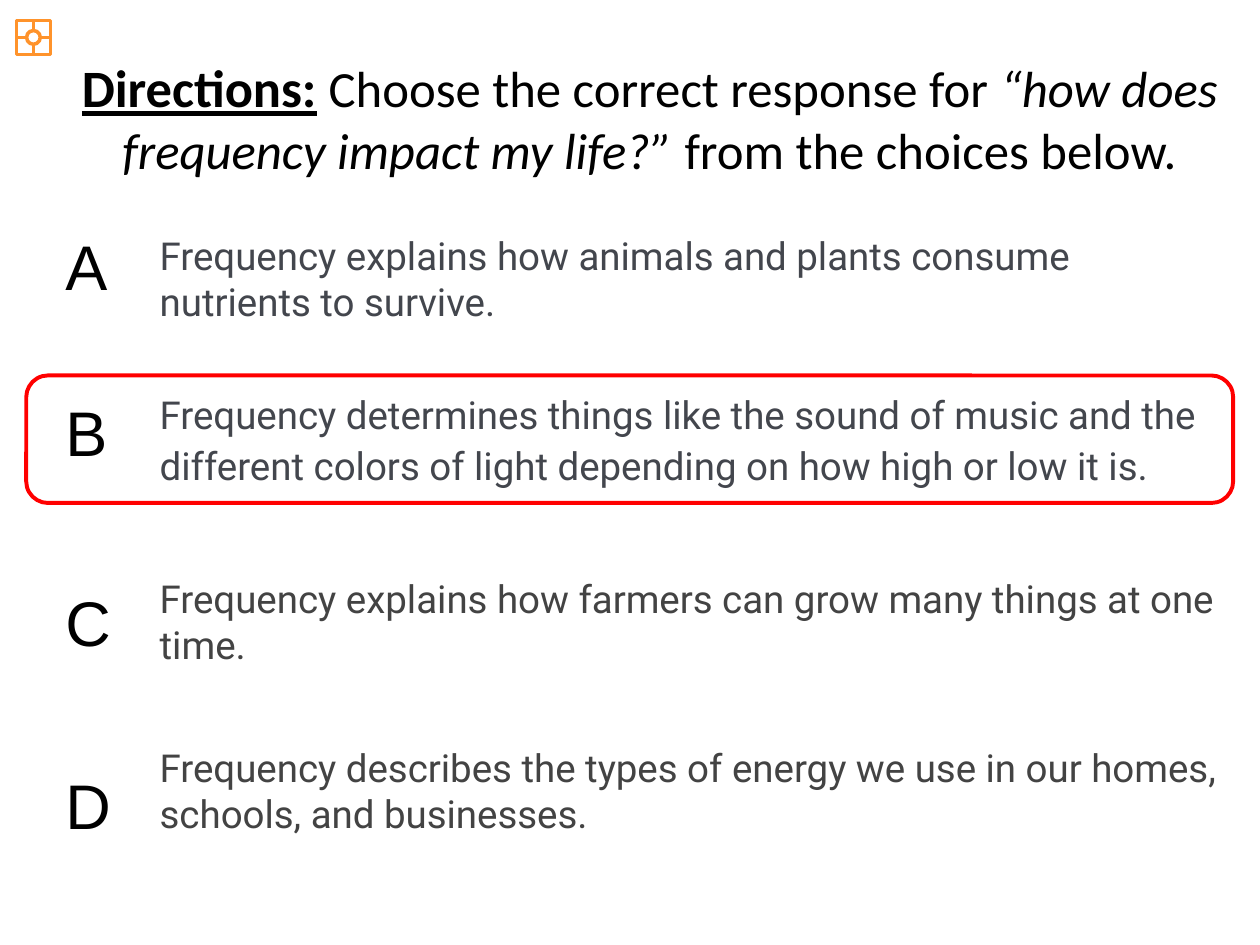
from lxml import etree
from pptx import Presentation
from pptx.dml.color import RGBColor
from pptx.enum.shapes import MSO_CONNECTOR, MSO_SHAPE
from pptx.enum.text import MSO_ANCHOR, MSO_AUTO_SIZE, PP_ALIGN
from pptx.oxml.ns import qn
from pptx.util import Cm, Pt

STRAIGHT = MSO_CONNECTOR.STRAIGHT
RECTANGLE, OVAL, ROUNDED = MSO_SHAPE.RECTANGLE, MSO_SHAPE.OVAL, MSO_SHAPE.ROUNDED_RECTANGLE
TOP, CENTER, NO_AUTOFIT = MSO_ANCHOR.TOP, PP_ALIGN.CENTER, MSO_AUTO_SIZE.NONE
ORANGE, RED, WHITE, BLACK = "FF932B", "FF0000", "FFFFFF", "000000"
SLATE, GREY = "43464D", "434343"

DIRECTIONS = [
    ("Directions:", 30, True, False, True),
    (" ", 30, True, False, False),
    ("Choose the correct response for ", 29, False, False, False),
    ("“how does frequency impact my life?” ", 29, False, True, False),
    ("from the choices below.", 29, False, False, False),
]
CHOICES = [
    ("A", "Frequency explains how animals and plants consume nutrients to survive.",
     SLATE, 4.55, -0.08, 1.0),
    ("B", "Frequency determines things like the sound of music and the different colors "
     "of light depending on how high or low it is.", SLATE, 7.67, 0.13, 1.1),
    ("C", "Frequency explains how farmers can grow many things at one time.",
     GREY, 11.46, 0.17, 1.0),
    ("D", "Frequency describes the types of energy we use in our homes, schools, "
     "and businesses.", GREY, 14.88, 0.44, 1.0),
]


def color(hex_string):
    """Return the colour for a hex string."""
    return RGBColor.from_string(hex_string)


def format_run(run, font_name, size, hex_string):
    """Set the font, size and colour of a run."""
    run.font.name = font_name
    run.font.size = Pt(size)
    run.font.color.rgb = color(hex_string)


def add_outline(slide, kind, left, top, width, height, line, weight, fill=None):
    """Add an outlined shape, hollow unless a fill is given."""
    shape = slide.shapes.add_shape(kind, Cm(left), Cm(top), Cm(width), Cm(height))
    shape.shadow.inherit = False
    shape.line.color.rgb = color(line)
    shape.line.width = Pt(weight)
    if fill:
        shape.fill.solid()
        shape.fill.fore_color.rgb = color(fill)
    else:
        shape.fill.background()
    return shape


def add_line(slide, start, end):
    """Add a straight orange line between two points."""
    points = [Cm(value) for value in (*start, *end)]
    connector = slide.shapes.add_connector(STRAIGHT, *points)
    connector.line.color.rgb = color(ORANGE)
    connector.line.width = Pt(2)
    etree.SubElement(connector._element.spPr, qn("a:effectLst"))


def add_target_icon(slide, left, top, size):
    """Draw a square with a ring in its middle and four spokes."""
    add_outline(slide, RECTANGLE, left, top, size, size, ORANGE, 2)
    ring = 0.4 * size
    spoke = (size - ring) / 2
    middle_x, middle_y = left + size / 2, top + size / 2
    for offset in (0, size - spoke):
        add_line(slide, (middle_x, top + offset), (middle_x, top + offset + spoke))
        add_line(slide, (left + offset, middle_y), (left + offset + spoke, middle_y))
    add_outline(slide, OVAL, left + spoke, top + spoke, ring, ring, ORANGE, 2, WHITE)


def place_directions(slide, left, top, width, height):
    """Place the title and fill it with the directions."""
    title = slide.shapes.title
    title.left, title.top = Cm(left), Cm(top)
    title.width, title.height = Cm(width), Cm(height)
    text_frame = title.text_frame
    text_frame.word_wrap = True
    text_frame.auto_size = NO_AUTOFIT
    text_frame.vertical_anchor = TOP
    paragraph = text_frame.paragraphs[0]
    paragraph.alignment = CENTER
    for text, size, bold, italic, underline in DIRECTIONS:
        run = paragraph.add_run()
        run.text = text
        format_run(run, "Calibri", size, BLACK)
        run.font.bold, run.font.italic, run.font.underline = bold, italic, underline


def add_text(slide, text, box, font_name, size, hex_string, spacing=1.0):
    """Add a wrapped text box with one paragraph."""
    text_frame = slide.shapes.add_textbox(*[Cm(value) for value in box]).text_frame
    text_frame.word_wrap = True
    text_frame.text = text
    paragraph = text_frame.paragraphs[0]
    paragraph.line_spacing = spacing
    format_run(paragraph.runs[0], font_name, size, hex_string)


def add_choice(slide, left, top, width, choice):
    """Add a choice: its letter and, to the right, its answer."""
    letter, answer, hex_string, _, letter_drop, spacing = choice
    indent = 1.9
    add_text(slide, letter, (left, top + letter_drop, 1.45, 1.8), "Arial", 36, BLACK)
    add_text(slide, answer, (left + indent, top, width - indent, 2.13),
             "Roboto", 22, hex_string, spacing)


def main():
    """Build the slide and save it."""
    presentation = Presentation()
    presentation.slide_width, presentation.slide_height = Cm(25.4), Cm(19.05)
    slide = presentation.slides.add_slide(presentation.slide_layouts[5])
    add_target_icon(slide, 0.33, 0.41, 0.69)
    place_directions(slide, 1.35, 0.99, 23.5, 2.77)
    for choice in CHOICES:
        add_choice(slide, 1.07, choice[3], 23.77, choice)
    frame = add_outline(slide, ROUNDED, 0.53, 7.57, 24.33, 2.57, RED, 2.25)
    frame.adjustments[0] = 0.17
    presentation.save("out.pptx")


if __name__ == "__main__":
    main()
